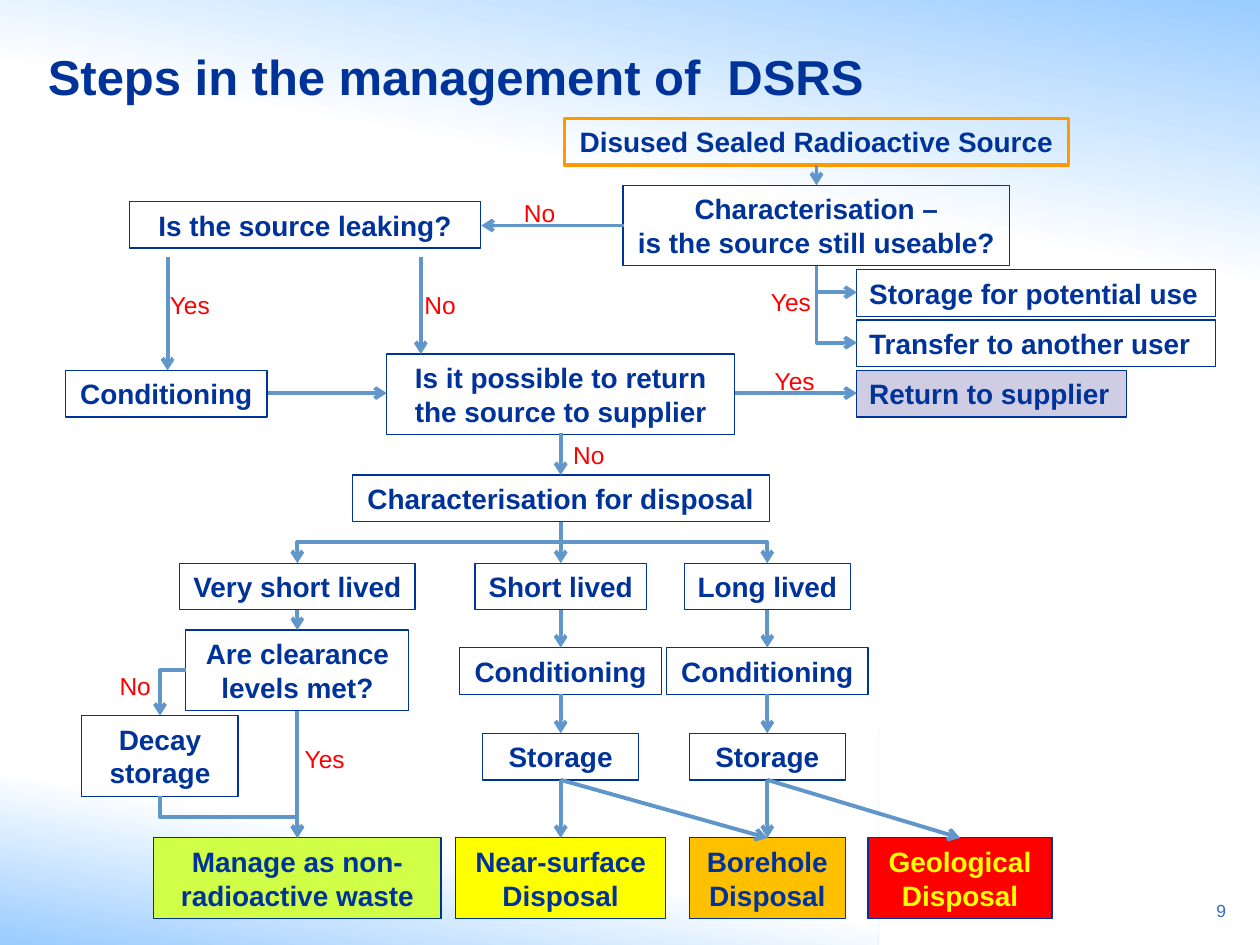
"""Build the flowchart slide on managing disused sealed radioactive sources."""
from lxml.etree import SubElement
from pptx import Presentation
from pptx.dml.color import RGBColor
from pptx.enum.shapes import MSO_CONNECTOR, MSO_SHAPE
from pptx.enum.text import MSO_ANCHOR, PP_ALIGN
from pptx.oxml.ns import qn
from pptx.util import Inches, Pt

COLORS = {name: RGBColor.from_string(code) for name, code in {
    "navy": "003399", "blue": "3366CC", "steel": "6196CA", "sky": "99CCFF",
    "white": "FFFFFF", "orange": "FF9900", "lilac": "CFCDE3", "lime": "D1FF47",
    "yellow": "FFFF00", "amber": "FFC000", "red": "FF0000"}.items()}

deck = Presentation()
deck.slide_width, deck.slide_height = Inches(10), Inches(7.5)
page = deck.slides.add_slide(deck.slide_layouts[5])
CELL = deck.slide_width / 100  # noqa

# noqa


def write(shape, text, size, color, align=PP_ALIGN.LEFT, bold=False, anchor=MSO_ANCHOR.MIDDLE):
    frame = shape.text_frame
    frame.text = text
    frame.word_wrap = True
    frame.vertical_anchor = anchor
    for para in frame.paragraphs:
        para.alignment = align
        para.font.name, para.font.size, para.font.bold = "Arial", Pt(size), bold
        para.font.color.rgb = COLORS[color]


def join(start, end, preset="line", down_first=False):
    (x1, y1), (x2, y2) = start, end
    if down_first:
        side = 1 if x2 > x1 else -1
        middle_x, middle_y = (x1 + x2) / 2, (y1 + y2) / 2
        half_width, half_height = side * (y2 - y1) / 2, abs(x2 - x1) / 2
        x1, x2 = middle_x + half_width, middle_x - half_width
        y1, y2 = middle_y - half_height, middle_y + half_height
    kind = MSO_CONNECTOR.STRAIGHT if preset == "line" else MSO_CONNECTOR.ELBOW
    arrow = page.shapes.add_connector(kind, *(round(v * CELL) for v in (x1, y1, x2, y2)))
    arrow.line.color.rgb = COLORS["steel"]
    arrow.line.width = Pt(2.25)
    properties = arrow.element.spPr
    properties.find(qn("a:prstGeom")).set("prst", preset)
    if down_first:
        properties.find(qn("a:xfrm")).set("rot", str((270 if side > 0 else 90) * 60000))
    SubElement(properties.find(qn("a:ln")), qn("a:tailEnd"), type="arrow")
    SubElement(properties, qn("a:effectLst"))


for top, width, height, angle, fade in [(58, 69.7, 17, 80, 0.48), (0, 100, 23.3, 260, 0.56)]:
    band = page.shapes.add_shape(MSO_SHAPE.RECTANGLE, 0, *(round(v * CELL) for v in (top, width, height)))
    band.shadow.inherit = False
    band.line.fill.background()
    band.fill.gradient()
    band.fill.gradient_angle = angle
    for stop, color, position in zip(band.fill.gradient_stops, ("sky", "white"), (0, fade)):
        stop.color.rgb = COLORS[color]
        stop.position = position

title = page.shapes.title
title.element.getparent().append(title.element)
title.left, title.top, title.width, title.height = (round(v * CELL) for v in (2.8, 1.3, 77.2, 9.4))
write(title, "Steps in the management of  DSRS", 28, "navy", bold=True)

SINGLE, DOUBLE = 3.7, 6.4
DECAY, VERY_SHORT, SHORT, LONG, SOURCE, GEOLOGICAL = 12.7, 23.6, 44.5, 60.9, 64.8, 76.2
OUTCOME, SUPPLIER, LIVED, CONDITION, STORE, DISPOSE = 68, 31.2, 44.7, 51.4, 58.2, 66.5

steps = [
    ("Disused Sealed Radioactive Source", SOURCE, 9.4, 40, SINGLE, None),
    ("Characterisation –\nis the source still useable?", SOURCE, 14.7, 30.7, DOUBLE, None),
    ("Return to supplier", OUTCOME + 10.7, 29.4, 21.4, SINGLE, "lilac"),
    ("Storage for potential use", OUTCOME + 14.25, 21.4, 28.5, SINGLE, None),
    ("Transfer to another user", OUTCOME + 14.25, 25.4, 28.5, SINGLE, None),
    ("Is the source leaking?", 24.2, 16, 27.9, SINGLE, None),
    ("Conditioning", 13.2, 29.4, 16, SINGLE, None),
    ("Is it possible to return the source to supplier", SHORT, 28.1, 27.6, DOUBLE, None),
    ("Characterisation for disposal", SHORT, 37.7, 33.1, SINGLE, None),
    ("Very short lived", VERY_SHORT, LIVED, 18.7, SINGLE, None),
    ("Short lived", SHORT, LIVED, 13.6, SINGLE, None),
    ("Long lived", LONG, LIVED, 13.2, SINGLE, None),
    ("Are clearance levels met?", VERY_SHORT, 50, 17.7, DOUBLE, None),
    ("Decay storage", DECAY, 56.8, 12.4, DOUBLE, None),
    ("Manage as non-radioactive waste", VERY_SHORT, DISPOSE, 22.8, DOUBLE, "lime"),
    ("Near-surface Disposal", SHORT, DISPOSE, 16.7, DOUBLE, "yellow"),
    ("Borehole\vDisposal", LONG, DISPOSE, 12.4, DOUBLE, "amber"),
    ("Geological Disposal", GEOLOGICAL, DISPOSE, 14.6, DOUBLE, "red"),
]
for centre in (SHORT, LONG):
    steps.append(("Conditioning", centre, CONDITION, 16, SINGLE, None))
    steps.append(("Storage", centre, STORE, 12.4, SINGLE, None))

for text, centre, top, width, height, fill in steps:
    left = centre - width / 2
    box = page.shapes.add_shape(MSO_SHAPE.RECTANGLE, *(round(v * CELL) for v in (left, top, width, height)))
    box.shadow.inherit = False
    if fill:
        box.fill.solid()
        box.fill.fore_color.rgb = COLORS[fill]
    else:
        box.fill.background()
    first = text.startswith("Disused")
    box.line.color.rgb = COLORS["orange" if first else "navy"]
    box.line.width = Pt(2 if first else 0.75)
    write(box, text, 16, "yellow" if fill == "red" else "navy",
          PP_ALIGN.LEFT if left == OUTCOME else PP_ALIGN.CENTER, True)

for start, end in [
    ((SOURCE, 13.1), (SOURCE, 14.7)),
    ((49.5, 17.9), (38.2, 17.9)),
    ((13.3, 20.4), (13.3, 29.4)),
    ((33.4, 20.4), (33.4, 28.1)),
    ((21.3, SUPPLIER), (30.7, SUPPLIER)),
    ((58.3, SUPPLIER), (OUTCOME, SUPPLIER)),
    ((SHORT, 34.4), (SHORT, 37.7)),
    ((SHORT, 41.4), (SHORT, LIVED)),
    ((VERY_SHORT, 48.4), (VERY_SHORT, 50)),
    ((VERY_SHORT, 56.4), (VERY_SHORT, DISPOSE)),
    ((SHORT, 61.9), (LONG, DISPOSE)),
    ((LONG, 61.9), (GEOLOGICAL, DISPOSE)),
]:
    join(start, end)
for centre in (SHORT, LONG):
    for top, bottom in [(LIVED, CONDITION), (CONDITION, STORE), (STORE, DISPOSE)]:
        join((centre, top + SINGLE), (centre, bottom))

for row in (23.2, 27.2):
    join((SOURCE, 21.1), (OUTCOME, row), "bentConnector2", True)
for centre in (VERY_SHORT, LONG):
    join((SHORT, 41.4), (centre, LIVED), "bentConnector3", True)
join((DECAY, 63.2), (VERY_SHORT, DISPOSE), "bentConnector3", True)
join((14.8, 53.2), (DECAY, 56.8), "bentConnector2")

for text, left, top in [
    ("Yes", 12.5, 22.5), ("No", 32.7, 22.5), ("Yes", 23.2, 58.6), ("No", 8.5, 52.8),
    ("Yes", 60.5, 28.6), ("No", 40.6, 15.2), ("Yes", 60.2, 22.3), ("No", 44.5, 34.4),
]:
    width = 5.2 if text == "Yes" else 4.5
    label = page.shapes.add_textbox(*(round(v * CELL) for v in (left, top, width, 3.4)))
    write(label, text, 14, "red", anchor=MSO_ANCHOR.TOP)

number = page.shapes.add_textbox(*(round(v * CELL) for v in (92.7, 70.9, 5.6, 3.2)))
write(number, "9", 10, "blue", PP_ALIGN.RIGHT, anchor=MSO_ANCHOR.TOP)

deck.save("out.pptx")
